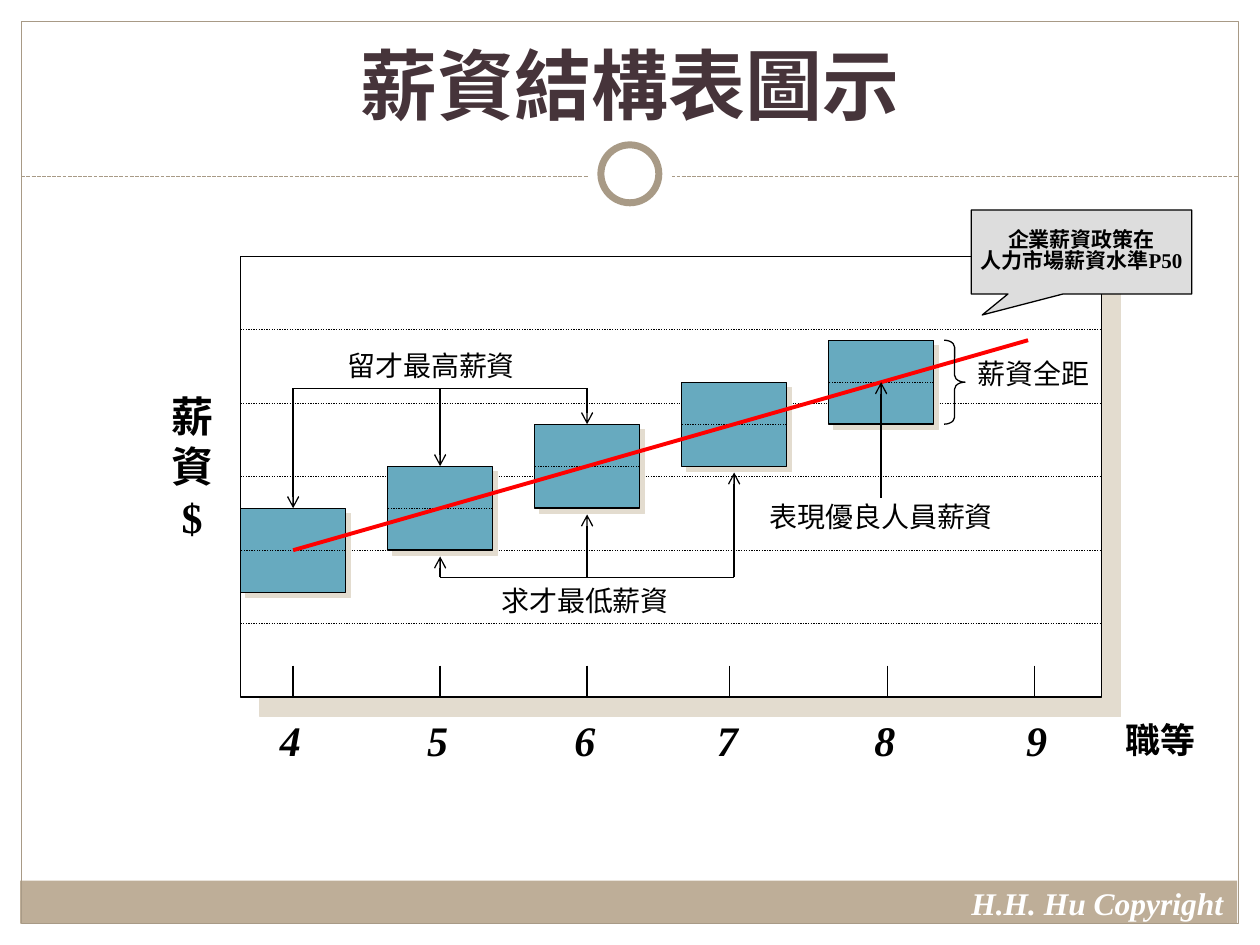
from lxml.etree import SubElement as Sub
from pptx import Presentation
from pptx.dml.color import RGBColor
from pptx.enum.dml import MSO_LINE as Dash
from pptx.enum.shapes import MSO_CONNECTOR as Link, MSO_SHAPE as Form
from pptx.enum.text import MSO_ANCHOR as Anchor, MSO_AUTO_SIZE as Fit, PP_ALIGN as Align
from pptx.oxml.ns import qn
from pptx.util import Pt


def tint(code):
    """Turn a hex string into a colour."""
    return RGBColor.from_string(code)


class Page:
    """Hold the style and the current slide."""

    face = "Times New Roman"
    ink = "000000"
    sand = "A89A86"
    shade = "E3DCCF"

    def __init__(self, deck):
        """Add a title-only slide."""
        self.slide = deck.slides.add_slide(deck.slide_layouts[5])
        self.shapes = self.slide.shapes

    def put(self, frame, text, size, color=None, bold=False, italic=None, align=Align.LEFT, space=None):
        """Fill a text frame, one paragraph a line."""
        frame.text = text
        for para in frame.paragraphs:
            para.alignment = align
            if space:
                para.line_spacing = space
            font = para.font
            font.name, font.size = self.face, Pt(size)
            font.bold, font.italic = bold, italic
            font.color.rgb = tint(color or self.ink)

    def title(self, text, x, y, w, h):
        """Place and style the title."""
        head = self.shapes.title
        head.left, head.top, head.width, head.height = Pt(x), Pt(y), Pt(w), Pt(h)
        frame = head.text_frame
        frame.auto_size = Fit.NONE
        frame.vertical_anchor = Anchor.BOTTOM
        self.put(frame, text, 44, "46343A", True, align=Align.CENTER)

    def label(self, text, x, y, w, h, size=16, **style):
        """Add a text box that fits its text."""
        frame = self.shapes.add_textbox(Pt(x), Pt(y), Pt(w), Pt(h)).text_frame
        frame.word_wrap = False
        frame.auto_size = Fit.SHAPE_TO_FIT_TEXT
        self.put(frame, text, size, **style)

    def shape(self, form, x, y, w, h, fill=None, line=None, width=0.75, drop=0, adjust=()):
        """Add a preset shape, with a hard shadow when drop is set."""
        item = self.shapes.add_shape(form, Pt(x), Pt(y), Pt(w), Pt(h))
        item.shadow.inherit = False
        for i, value in enumerate(adjust):
            item.adjustments[i] = value
        if fill:
            item.fill.solid()
            item.fill.fore_color.rgb = tint(fill)
        else:
            item.fill.background()
        if line:
            item.line.color.rgb = tint(line)
            item.line.width = Pt(width)
        else:
            item.line.fill.background()
        if drop:
            effects = item.element.spPr.find(qn("a:effectLst"))
            cast = Sub(effects, qn("a:outerShdw"), dist=str(Pt(drop)), dir="2700000", algn="ctr", rotWithShape="0")
            Sub(cast, qn("a:srgbClr"), val=self.shade)
        return item

    def line(self, x1, y1, x2, y2, color=None, width=0.75, dash=None, tip=None, start=None, end=None):
        """Add a line; tip is headEnd or tailEnd, start and end are joints."""
        item = self.shapes.add_connector(Link.STRAIGHT, Pt(x1), Pt(y1), Pt(x2), Pt(y2))
        item.line.color.rgb = tint(color or self.ink)
        item.line.width = Pt(width)
        if dash:
            item.line.dash_style = dash
        props = item.element.spPr
        if tip:
            Sub(props.find(qn("a:ln")), qn("a:" + tip), type="arrow")
        Sub(props, qn("a:effectLst"))
        if start:
            item.begin_connect(*start)
        if end:
            item.end_connect(*end)


def border(page):
    """Draw the border, footer band and ring."""
    page.shape(Form.RECTANGLE, 11.5, 503.3, 695.5, 24.5, "BEAE98")
    page.shape(Form.RECTANGLE, 12.2, 12.2, 695.5, 515.5, line=page.sand)
    page.line(12.2, 100.8, 707.8, 100.8, page.sand, dash=Dash.SQUARE_DOT)
    page.shape(Form.OVAL, 336, 75.6, 48, 48, "FFFFFF")
    page.shape(Form.OVAL, 343.4, 82.8, 33.1, 33.1, "FFFFFF", page.sand, 4)
    page.label("H.H. Hu Copyright", 548, 501.8, 163.4, 28.8, 18, color="FFFFFF", bold=True, italic=True)


def chart(page):
    """Draw the salary bands and their notes."""
    left, top, wide, high = 137.5, 146.4, 492, 252
    right, base = left + wide, top + high
    plot = page.shape(Form.RECTANGLE, left, top, wide, high, "FFFFFF", page.ink, drop=15.6)
    for i in range(1, 6):
        y = top + 42 * i
        ends = {"start": (plot, 1), "end": (plot, 3)} if i == 3 else {}
        page.line(left, y, right, y, dash=Dash.ROUND_DOT, **ends)

    bands = []
    for i in range(5):
        x, y = left + 84 * i, 290.4 - 24 * i
        band = page.shape(Form.RECTANGLE, x, y, 60, 48, "67AABF", page.ink, drop=4.2)
        page.line(x + 60, y + 24, x, y + 24, dash=Dash.ROUND_DOT, start=(band, 3), end=(band, 1))
        bands.append(band)
    mids = [left + 30 + 84 * i for i in range(5)]
    page.line(mids[0], 314.4, mids[0] + 420, 194.4, "FF0000", 2.25)

    page.label("薪\n資\n$", 90.7, 219.6, 38.2, 93.6, 24, bold=True, align=Align.CENTER)
    ticks = (*mids[:3], 417, 507, 591)
    places = (152.6, 236.8, 321, 402.4, 492.4, 579)
    for grade, (x, place) in enumerate(zip(ticks, places), 4):
        page.line(x, base - 18, x, base)
        page.label(str(grade), place, 404.6, 26.6, 36, 24, bold=True, italic=True, align=Align.CENTER)
    page.label("職等", 635.8, 406.8, 54.7, 31, 20, bold=True)

    page.shape(Form.RIGHT_BRACE, 539.5, 194.4, 12, 48, line=page.ink, adjust=(0.33, 0.5))
    page.label("薪資全距", 551.5, 200.2, 78.5, 26.6)

    bus = 222
    for i in range(3):
        page.line(mids[i], 290.4 - 24 * i, mids[i], bus, tip="headEnd", start=(bands[i], 0))
    page.line(mids[0], bus, mids[2], bus)
    page.label("留才最高薪資", 191.5, 195.8, 110.2, 26.6)

    bus = 330
    for i in range(1, 4):
        page.line(mids[i], bus, mids[i], 342 - 24 * i, tip="tailEnd")
    page.line(mids[1], bus, mids[3], bus)
    page.label("求才最低薪資", 279.4, 329.8, 110.2, 26.6)

    page.line(mids[4], 218.4, mids[4], 284.4, tip="headEnd")
    page.label("表現優良人員薪資", 432.7, 282.2, 142.6, 26.6)

    note = page.shape(Form.RECTANGULAR_CALLOUT, 555, 120, 126, 48, "DDDDDD", page.ink, adjust=(-0.45, 0.75))
    note.text_frame.word_wrap = False
    note.text_frame.vertical_anchor = Anchor.MIDDLE
    page.put(note.text_frame, "企業薪資政策在\n人力市場薪資水準P50", 12, bold=True, align=Align.CENTER, space=0.8)


def main():
    """Build and save the slide."""
    deck = Presentation()
    deck.slide_width, deck.slide_height = Pt(720), Pt(540)
    page = Page(deck)
    border(page)
    page.title("薪資結構表圖示", 24, 18, 672, 60)
    chart(page)
    deck.save("out.pptx")


if __name__ == "__main__":
    main()
